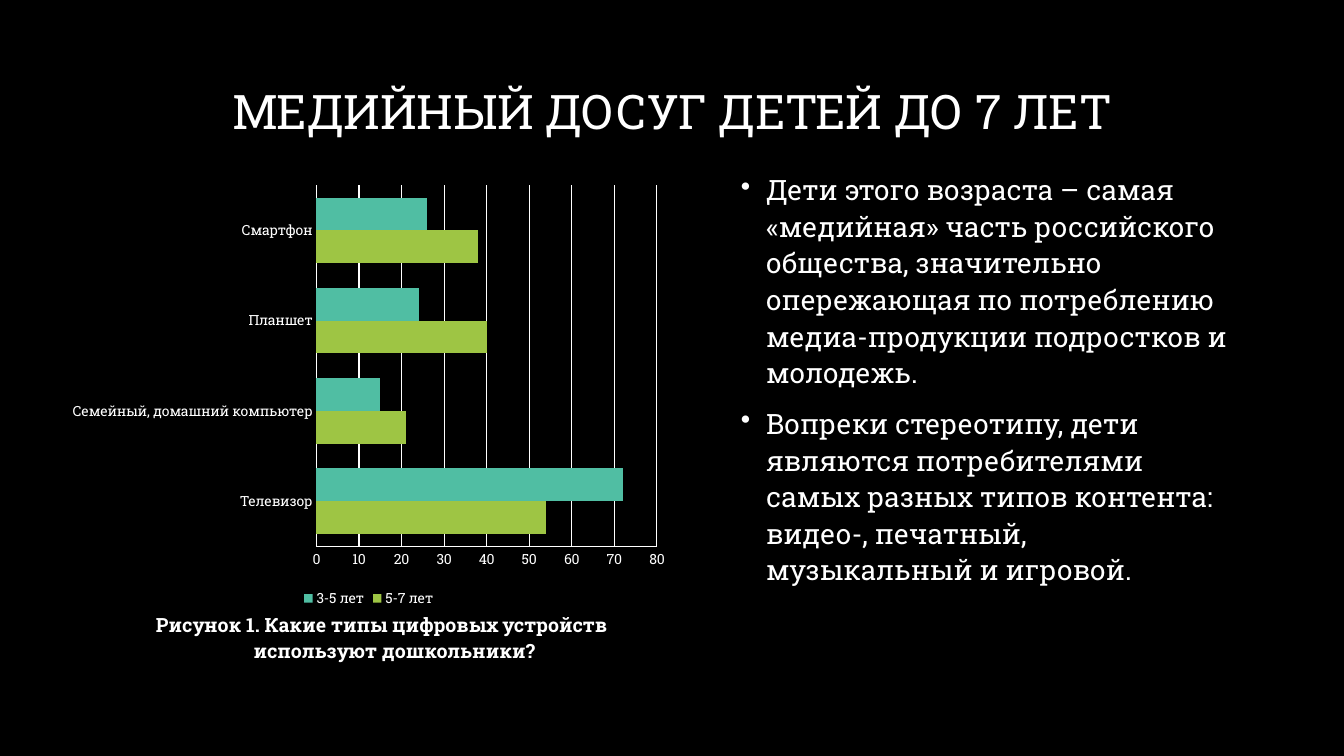
from lxml import etree
from pptx import Presentation
from pptx.chart.data import CategoryChartData
from pptx.dml.color import RGBColor
from pptx.enum import chart as ch, text
from pptx.util import Cm, Pt

FONT = "Roboto Slab"
WHITE = "FFFFFF"


def rgb(value):
    return RGBColor.from_string(value)


def add_text(box, lines, size, spacing, bold=False, align=None, hanging=False, bullet=False):
    tf = s.shapes.add_textbox(*[Cm(v) for v in box]).text_frame
    tf.word_wrap = True
    for i, line in enumerate(lines):
        p = tf.paragraphs[0] if i == 0 else tf.add_paragraph()
        p.text = line
        p.alignment = align
        p.line_spacing = spacing
        p.space_before = Pt(10 if i else 0)
        p.font.size, p.font.name, p.font.bold = Pt(size), FONT, bold
        p.font.color.rgb = rgb(WHITE)
        pPr = p._p.get_or_add_pPr()
        if hanging:
            pPr.set("marL", str(Cm(0.635)))
            pPr.set("indent", str(-Cm(0.635)))
        if bullet:
            bu = etree.Element(pPr.tag.replace("pPr", "buChar"), char="•")
            pPr.insert_element_before(bu, "a:tabLst", "a:defRPr", "a:extLst")
    return tf


prs = Presentation()
prs.slide_width, prs.slide_height = Cm(33.87), Cm(19.05)
s = prs.slides.add_slide(prs.slide_layouts[6])
s.background.fill.solid()
s.background.fill.fore_color.rgb = rgb("000000")

# Title
tf = add_text((2.54, 1.7, 28.75, 2.34), ["МЕДИЙНЫЙ ДОСУГ ДЕТЕЙ ДО 7 ЛЕТ"], 34, 0.9,
              align=text.PP_ALIGN.CENTER)
tf.vertical_anchor = text.MSO_ANCHOR.MIDDLE

# Bullets on the right
add_text((18.42, 4.15, 12.9, 11.96), [
    "Дети этого возраста – самая «медийная» часть российского общества, значительно "
    "опережающая по потреблению медиа-продукции подростков и молодежь.",
    "Вопреки стереотипу, дети являются потребителями самых разных типов контента: "
    "видео-, печатный, музыкальный и игровой.",
], 20, 1.09, hanging=True, bullet=True)

# Bar chart of devices
data = CategoryChartData()
data.categories = ["Телевизор", "Семейный, домашний компьютер", "Планшет", "Смартфон"]
data.add_series("5-7 лет", [54, 21, 40, 38])
data.add_series("3-5 лет", [72, 15, 24, 26])
chart = s.shapes.add_chart(ch.XL_CHART_TYPE.BAR_CLUSTERED, Cm(1.52), Cm(4.45),
                           Cm(15.54), Cm(10.97), data).chart
chart.has_title = False
chart.font.size, chart.font.name = Pt(10), FONT
chart.font.color.rgb = rgb(WHITE)
chart.has_legend = True
chart.legend.position = ch.XL_LEGEND_POSITION.BOTTOM
chart.legend.include_in_layout = False

plot = chart.plots[0]
plot.gap_width, plot.overlap = 75, 0
plot.vary_by_categories = False
for series, color in zip(plot.series, ["9EC544", "50BEA3"]):
    series.format.fill.solid()
    series.format.fill.fore_color.rgb = rgb(color)

# Axes and gridlines
values = chart.value_axis
values.minimum_scale, values.maximum_scale, values.major_unit = 0, 80, 10
values.has_major_gridlines = True
for axis in (chart.category_axis, values):
    axis.major_tick_mark = axis.minor_tick_mark = ch.XL_TICK_MARK.NONE
for item in (chart.category_axis, values, values.major_gridlines):
    item.format.line.color.rgb = rgb(WHITE)
    item.format.line.width = Pt(0.75)

# Chart caption
add_text((2.54, 15.24, 14.17, 1.8),
         ["Рисунок 1. Какие типы цифровых устройств используют дошкольники?"],
         14, 1.12, bold=True, align=text.PP_ALIGN.CENTER, hanging=True)

prs.save("out.pptx")
